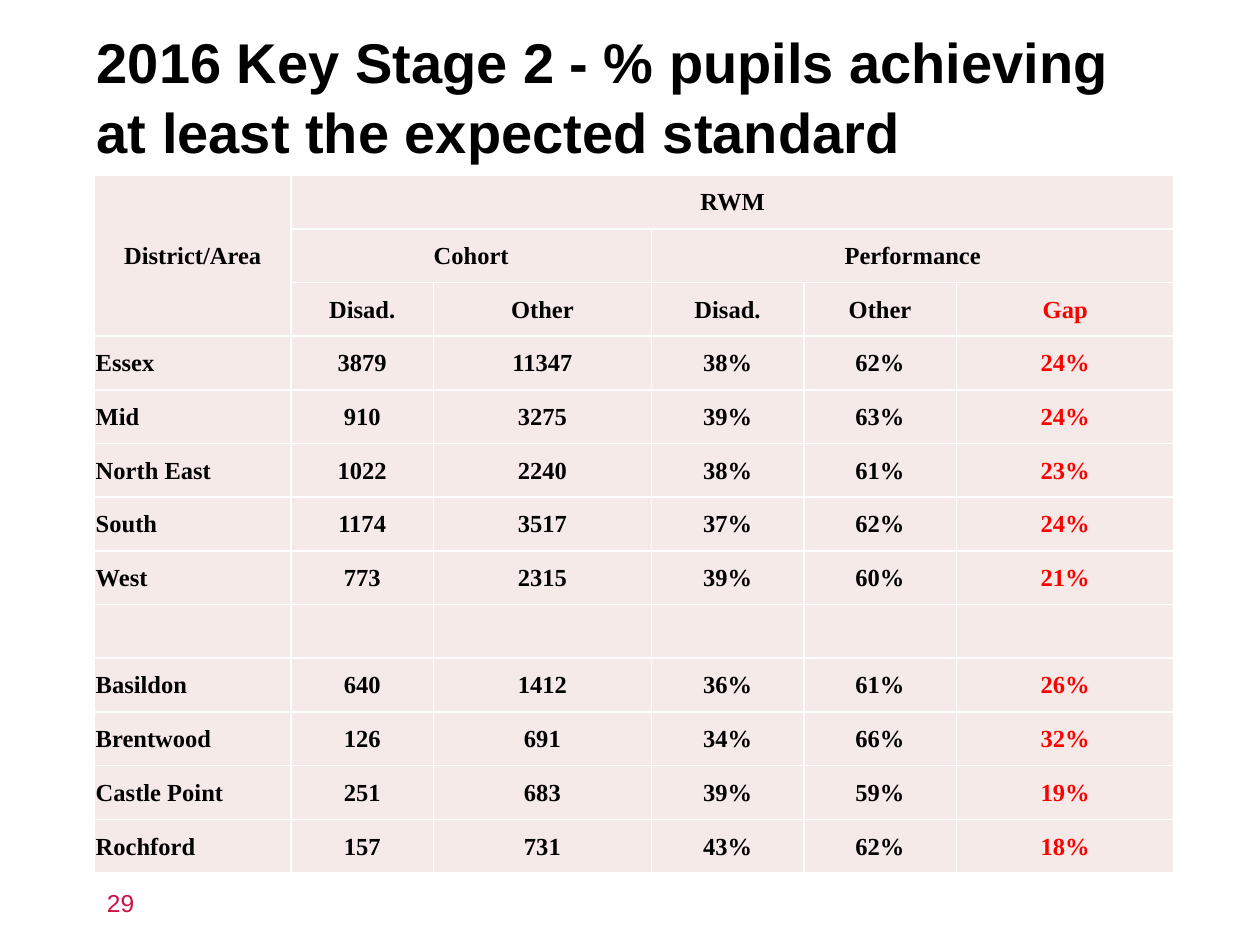
from lxml.etree import SubElement
from pptx import Presentation
from pptx.dml.color import RGBColor
from pptx.enum.text import MSO_ANCHOR, PP_ALIGN
from pptx.oxml.ns import qn
from pptx.util import Inches, Pt

COLORS = {"text": "000000", "gap": "FF0000", "cell": "F5EAE7",
          "border": "FFFFFF", "number": "D00F44"}


def write(frame, text, font="Arial", size=14, color="text", bold=False,
          align=PP_ALIGN.LEFT, anchor=MSO_ANCHOR.TOP, spacing=1.0):
    frame.word_wrap = True
    frame.vertical_anchor = anchor
    para = frame.paragraphs[0]
    para.alignment = align
    para.line_spacing = spacing
    span = para.add_run()
    span.text = text
    span.font.name = font
    span.font.size = Pt(size)
    span.font.bold = bold
    span.font.color.rgb = RGBColor.from_string(COLORS[color])


def add_borders(cell):
    properties = cell._tc.get_or_add_tcPr()
    for index, side in enumerate(("lnL", "lnR", "lnT", "lnB")):
        line = properties.makeelement(qn(f"a:{side}"), {"w": str(Pt(1))})
        fill = SubElement(line, qn("a:solidFill"))
        SubElement(fill, qn("a:srgbClr"), val=COLORS["border"])
        properties.insert(index, line)  # borders come before the cell fill


deck = Presentation()
deck.slide_width = Inches(10)
deck.slide_height = Inches(7.5)
page = deck.slides.add_slide(deck.slide_layouts[6])

# Title
title = page.shapes.add_textbox(Inches(0.67), Inches(0.13), Inches(8.58), Inches(1.25))
write(title.text_frame, "2016 Key Stage 2 - % pupils achieving at least the expected standard",
      size=32, bold=True, anchor=MSO_ANCHOR.MIDDLE, spacing=1.04)

# Table content: three header rows, then areas and districts
rows = [
    ["District/Area", "RWM", "", "", "", ""],
    ["", "Cohort", "", "Performance", "", ""],
    ["", "Disad.", "Other", "Disad.", "Other", "Gap"],
    ["Essex", "3879", "11347", "38%", "62%", "24%"],
    ["Mid", "910", "3275", "39%", "63%", "24%"],
    ["North East", "1022", "2240", "38%", "61%", "23%"],
    ["South", "1174", "3517", "37%", "62%", "24%"],
    ["West", "773", "2315", "39%", "60%", "21%"],
    [""] * 6,
    ["Basildon", "640", "1412", "36%", "61%", "26%"],
    ["Brentwood", "126", "691", "34%", "66%", "32%"],
    ["Castle Point", "251", "683", "39%", "59%", "19%"],
    ["Rochford", "157", "731", "43%", "62%", "18%"],
]
widths = [1.56, 1.13, 1.73, 1.21, 1.21, 1.73]
header_count = 3
table_height = Inches(5.54)

table = page.shapes.add_table(len(rows), len(widths), Inches(0.75), Inches(1.39),
                              Inches(sum(widths)), table_height).table
for column, width in zip(table.columns, widths):
    column.width = Inches(width)
for row in table.rows:
    row.height = table_height // len(rows)

# Header spans: first and last cell as (row, column)
for first, last in [((0, 0), (2, 0)), ((0, 1), (0, 5)), ((1, 1), (1, 2)), ((1, 3), (1, 5))]:
    table.cell(*first).merge(table.cell(*last))

# Cell formats and text
for row_index, values in enumerate(rows):
    for column_index, value in enumerate(values):
        cell = table.cell(row_index, column_index)
        cell.fill.solid()
        cell.fill.fore_color.rgb = RGBColor.from_string(COLORS["cell"])
        cell.margin_left = cell.margin_right = cell.margin_top = Inches(0.01)
        cell.margin_bottom = 0
        cell.vertical_anchor = MSO_ANCHOR.MIDDLE
        add_borders(cell)
        if value:
            is_name = column_index == 0 and row_index >= header_count
            write(cell.text_frame, value, font="Times New Roman", bold=True,
                  color="gap" if column_index == 5 else "text",
                  align=PP_ALIGN.LEFT if is_name else PP_ALIGN.CENTER,
                  anchor=MSO_ANCHOR.MIDDLE)

# Page number
number = page.shapes.add_textbox(Inches(0.75), Inches(7), Inches(2.08), Inches(0.33))
write(number.text_frame, "29", color="number")

deck.save("out.pptx")
